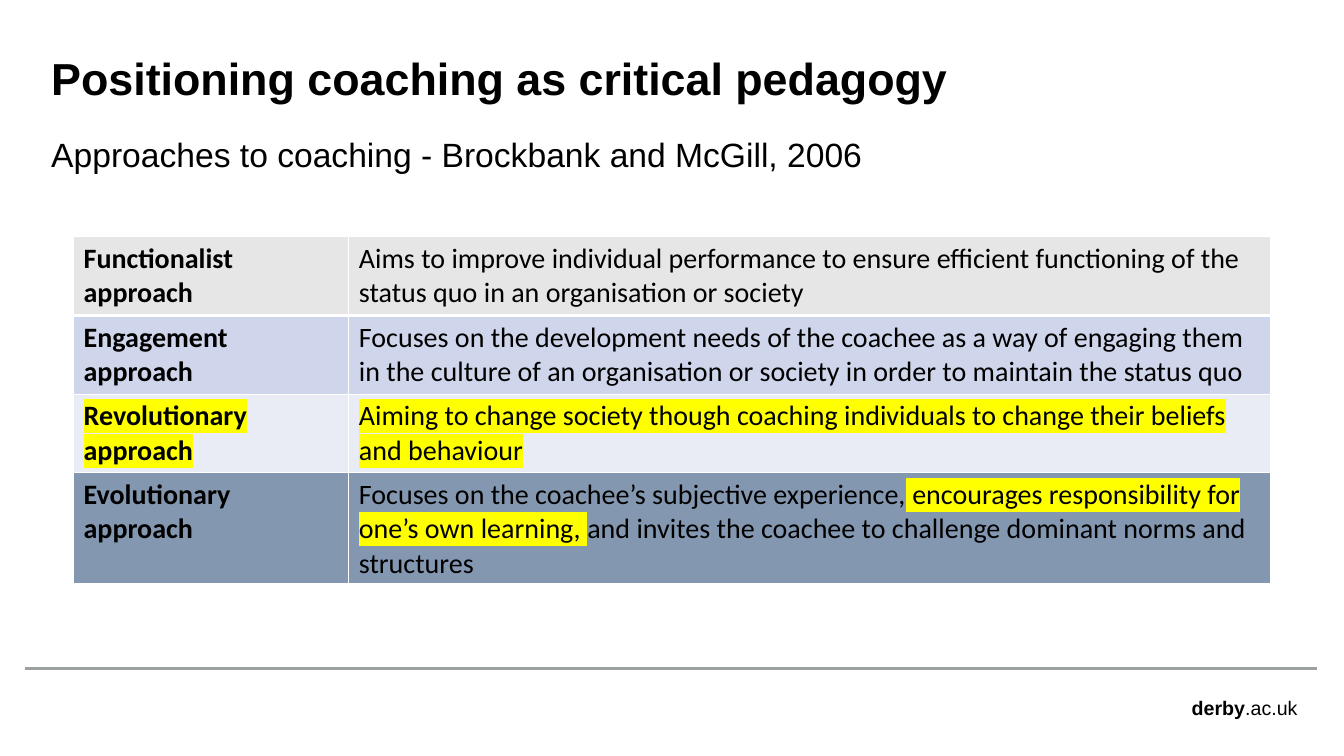
from lxml import etree
from pptx import Presentation
from pptx.dml.color import RGBColor
from pptx.enum import shapes, text
from pptx.oxml import ns
from pptx.util import Inches, Pt

BLACK = RGBColor(0x00, 0x00, 0x00)
WHITE = RGBColor(0xFF, 0xFF, 0xFF)
YELLOW = RGBColor(0xFF, 0xFF, 0x00)
RULE_GREY = RGBColor(0x9D, 0xA0, 0xA1)
PALE_GREY = RGBColor(0xE7, 0xE6, 0xE6)
LAVENDER = RGBColor(0xCF, 0xD5, 0xEA)
PALE_LAVENDER = RGBColor(0xE9, 0xEB, 0xF5)
SLATE = RGBColor(0x84, 0x97, 0xB0)

APPROACHES = [
    (PALE_GREY, 0.78, [("Functionalist approach", False)],
     [("Aims to improve individual performance to ensure efficient functioning of the "
       "status quo in an organisation or society", False)]),
    (LAVENDER, 0.78, [("Engagement approach", False)],
     [("Focuses on the development needs of the coachee as a way of engaging them "
       "in the culture of an organisation or society in order to maintain the status quo", False)]),
    (PALE_LAVENDER, 0.78, [("Revolutionary approach", True)],
     [("Aiming to change society though coaching individuals to change their beliefs "
       "and behaviour", True)]),
    (SLATE, 1.1, [("Evolutionary approach", False)],
     [("Focuses on the coachee’s subjective experience,", False),
      (" encourages responsibility for one’s own learning, ", True),
      ("and invites the coachee to challenge dominant norms and structures", False)]),
]


def add_text(paragraph, wording, size, font="Arial", bold=False, highlighted=False):
    run = paragraph.add_run()
    run.text = wording
    run.font.size = Pt(size)
    run.font.name = font
    run.font.bold = bold
    run.font.color.rgb = BLACK
    if highlighted:
        highlight = etree.Element(ns.qn("a:highlight"))
        etree.SubElement(highlight, ns.qn("a:srgbClr"), val=str(YELLOW))
        run.font._element.find(ns.qn("a:solidFill")).addnext(highlight)


def add_box(slide, left, top, width, height, anchor=text.MSO_ANCHOR.TOP):
    frame = slide.shapes.add_textbox(
        Inches(left), Inches(top), Inches(width), Inches(height)).text_frame
    frame.word_wrap = True
    frame.vertical_anchor = anchor
    return frame


def add_heading(slide, left, top):
    title = add_box(slide, left, top, 11.47, 0.68, text.MSO_ANCHOR.BOTTOM).paragraphs[0]
    title.line_spacing = 0.9
    add_text(title, "Positioning coaching as critical pedagogy", 32, bold=True)
    subtitle = add_box(slide, left, top + 0.91, 12.81, 5.09).paragraphs[0]
    subtitle.line_spacing = 0.9
    add_text(subtitle, "Approaches to coaching - Brockbank and McGill, 2006", 24)


def set_borders(cell, bottom_width, top_width):
    widths = {"lnL": 1, "lnR": 1, "lnT": top_width, "lnB": bottom_width}
    properties = cell._tc.get_or_add_tcPr()
    for position, (side, width) in enumerate(widths.items()):
        border = etree.Element(ns.qn(f"a:{side}"), w=str(Pt(width)))
        fill = etree.SubElement(border, ns.qn("a:solidFill"))
        etree.SubElement(fill, ns.qn("a:srgbClr"), val=str(WHITE))
        properties.insert(position, border)


def add_approaches(slide, left, top, width):
    height = sum(row_height for _, row_height, _, _ in APPROACHES)
    table = slide.shapes.add_table(
        len(APPROACHES), 2, Inches(left), Inches(top), Inches(width), Inches(height)).table
    table.columns[0].width = Inches(2.73)
    table.columns[1].width = Inches(width - 2.73)
    for index, (colour, row_height, name, aim) in enumerate(APPROACHES):
        table.rows[index].height = Inches(row_height)
        for column, wording in enumerate((name, aim)):
            cell = table.cell(index, column)
            cell.fill.solid()
            cell.fill.fore_color.rgb = colour
            set_borders(cell, 3 if index == 0 else 1, 3 if index == 1 else 1)
            for part, highlighted in wording:
                add_text(cell.text_frame.paragraphs[0], part, 20, font="Calibri",
                         bold=column == 0, highlighted=highlighted)


def add_footer(slide, left, top, width):
    rule = slide.shapes.add_connector(
        shapes.MSO_CONNECTOR.STRAIGHT,
        Inches(left + width), Inches(top), Inches(left), Inches(top))
    rule.line.color.rgb = RULE_GREY
    rule.line.width = Pt(2)
    etree.SubElement(rule._element.spPr, ns.qn("a:effectLst"))
    address = add_box(slide, left + width - 1.34, top + 0.22, 1.31, 0.34)
    address.auto_size = text.MSO_AUTO_SIZE.SHAPE_TO_FIT_TEXT
    add_text(address.paragraphs[0], "derby", 14, bold=True)
    add_text(address.paragraphs[0], ".ac.uk", 14)


def main():
    deck = Presentation()
    deck.slide_width = Inches(13.33)
    deck.slide_height = Inches(7.5)
    slide = deck.slides.add_slide(deck.slide_layouts[6])
    slide.background.fill.solid()
    slide.background.fill.fore_color.rgb = WHITE
    add_footer(slide, 0.25, 6.63, 12.81)
    add_heading(slide, 0.41, 0.41)
    add_approaches(slide, 0.73, 2.35, 11.87)
    deck.save("out.pptx")


if __name__ == "__main__":
    main()
